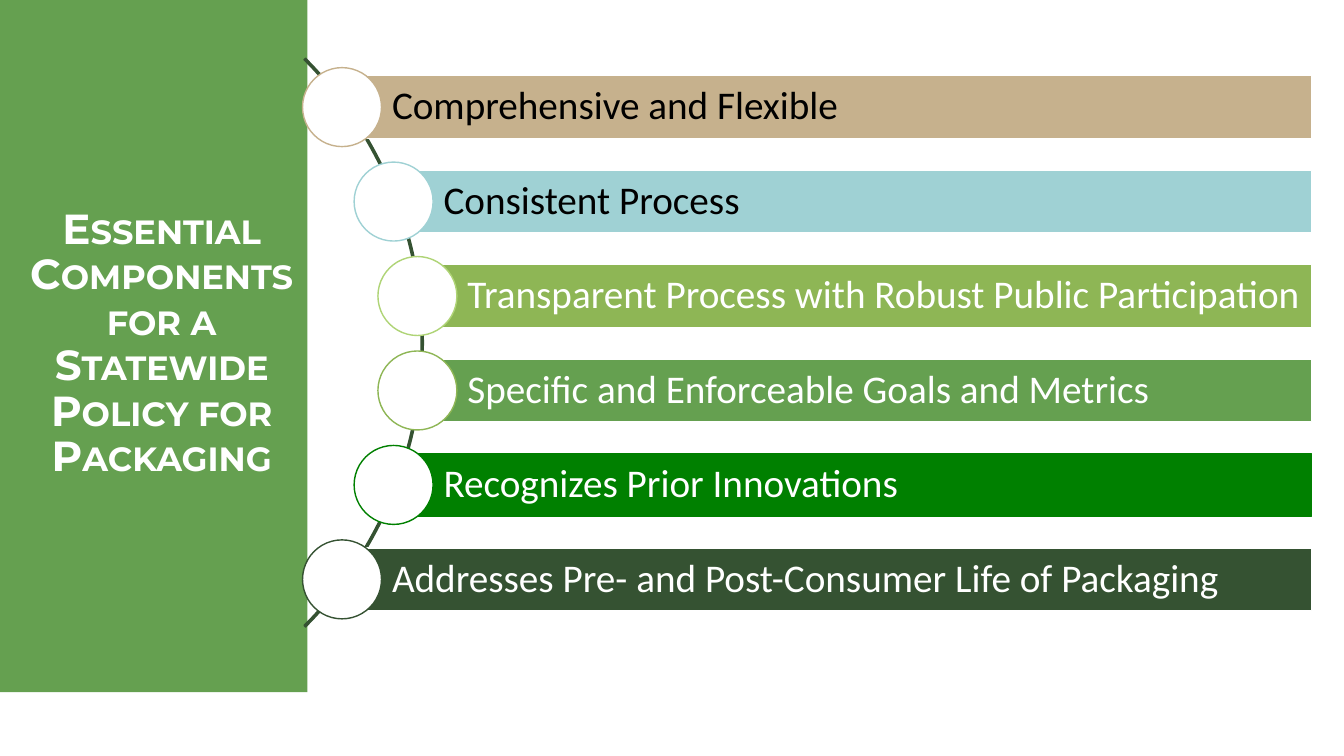
from pptx import Presentation
from pptx.dml.color import RGBColor
from pptx.enum.shapes import MSO_SHAPE
from pptx.enum.text import MSO_ANCHOR, PP_ALIGN
from pptx.util import Cm, Pt

RECTANGLE, OVAL, ARC = MSO_SHAPE.RECTANGLE, MSO_SHAPE.OVAL, MSO_SHAPE.BLOCK_ARC
MIDDLE = MSO_ANCHOR.MIDDLE
LEFT, CENTER = PP_ALIGN.LEFT, PP_ALIGN.CENTER


def add_shape(kind, left, top, width, height, fill, line=None):
    shape = page.shapes.add_shape(kind, Cm(left), Cm(top), Cm(width), Cm(height))
    shape.shadow.inherit = False
    shape.fill.solid()
    shape.fill.fore_color.rgb = RGBColor.from_string(fill)
    if line:
        shape.line.color.rgb = RGBColor.from_string(line)
        shape.line.width = Pt(1)
    else:
        shape.line.fill.background()
    return shape


def write(box, text, font, size, color, align):
    frame = box.text_frame
    frame.word_wrap = True
    frame.vertical_anchor = MIDDLE
    para = frame.paragraphs[0]
    para.alignment = align
    para.line_spacing = 0.9
    span = para.add_run()
    span.text = text
    span.font.name = font
    span.font.size = Pt(size)
    span.font.color.rgb = RGBColor.from_string(color)
    return span


deck = Presentation()
deck.slide_width, deck.slide_height = Cm(33.87), Cm(19.05)
page = deck.slides.add_slide(deck.slide_layouts[6])

# Side panel with title
add_shape(RECTANGLE, 0, -0.04, 7.75, 17.48, "65A050")
title = page.shapes.add_textbox(Cm(0), Cm(5.28), Cm(8.15), Cm(6.8))
span = write(title, "Essential Components for a Statewide Policy for Packaging",
             "Montserrat", 30, "FFFFFF", CENTER)
span.font.bold = True
span.font._element.set("cap", "small")

# Curve behind the circles, from 315 to 45 degrees
curve = add_shape(ARC, -9.6, -1.5, 20.27, 20.27, "355232", "355232")
curve.adjustments[0] = 189
curve.adjustments[1] = 27
curve.adjustments[2] = 0.0027

# Component bars: text, left edge, fill, bar outline, circle outline, text colour
components = [
    ("Comprehensive and Flexible", 8.62, "C6B18D", "FFFFFF", "C6B18D", "000000"),
    ("Consistent Process", 9.92, "9FD1D4", "FFFFFF", "9FD1D4", "000000"),
    ("Transparent Process with Robust Public Participation", 10.52,
     "8EB655", "FFFFFF", "AFD476", "FFFFFF"),
    ("Specific and Enforceable Goals and Metrics", 10.52,
     "65A050", "FFFFFF", "8EB655", "FFFFFF"),
    ("Recognizes Prior Innovations", 9.92, "008000", "008000", "008000", "FFFFFF"),
    ("Addresses Pre- and Post-Consumer Life of Packaging", 8.62,
     "355232", "FFFFFF", "355232", "FFFFFF"),
]
FIRST_TOP, PITCH, BAR_HEIGHT, BAR_RIGHT, DIAMETER = 1.91, 2.38, 1.58, 33.05, 1.99

for row, (text, left, fill, outline, ring, color) in enumerate(components):
    top = FIRST_TOP + row * PITCH
    bar = add_shape(RECTANGLE, left, top, BAR_RIGHT - left, BAR_HEIGHT, fill, outline)
    bar.text_frame.margin_left = Cm(1.26)
    bar.text_frame.margin_right = Cm(0.1)
    write(bar, text, "Calibri", 28, color, LEFT)
    # Circle centred on the left end of the bar
    add_shape(OVAL, left - DIAMETER / 2, top + (BAR_HEIGHT - DIAMETER) / 2,
              DIAMETER, DIAMETER, "FFFFFF", ring)

deck.save("out.pptx")
